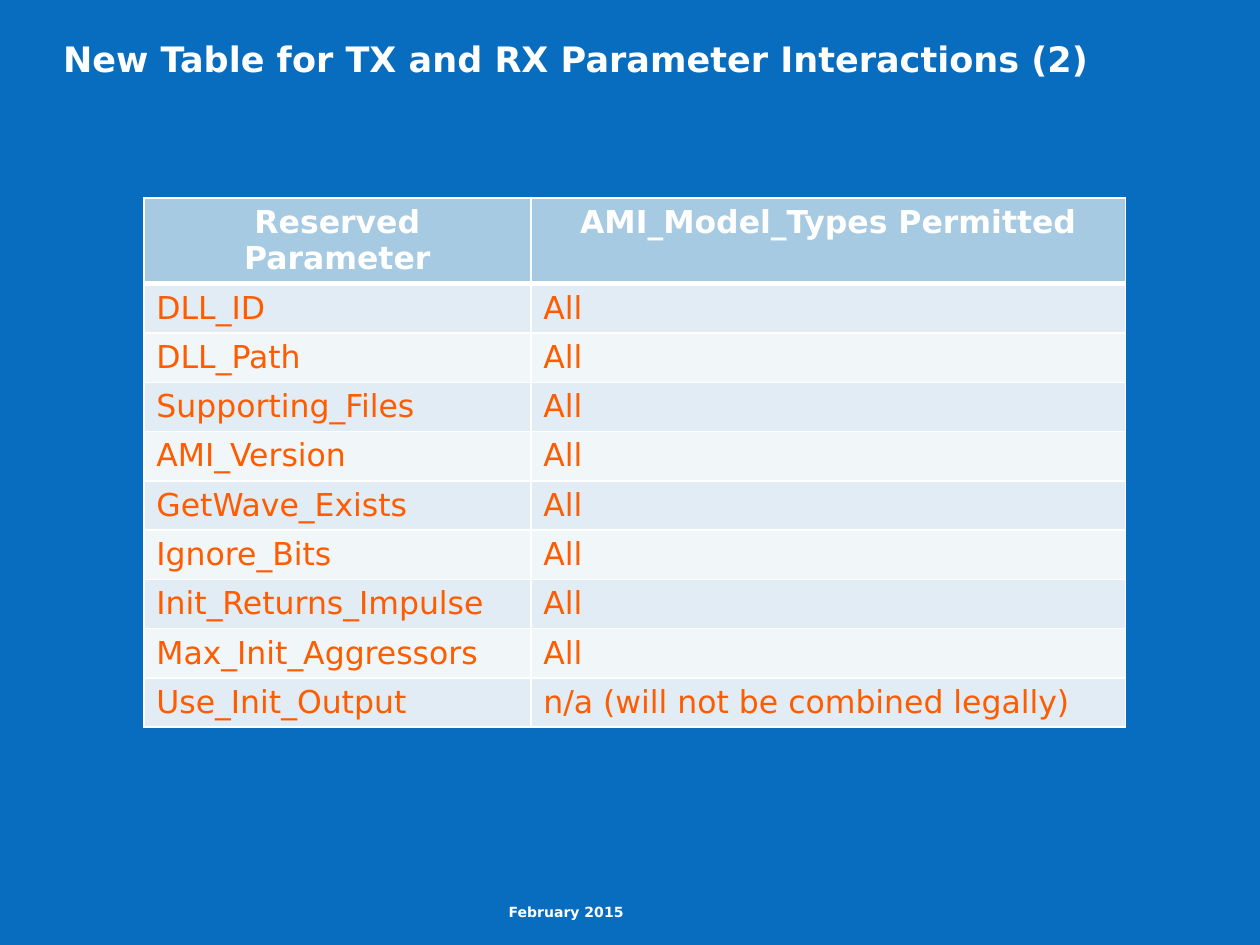
from lxml.etree import SubElement
from pptx import Presentation
from pptx.dml.color import RGBColor
from pptx.enum.text import MSO_ANCHOR, MSO_AUTO_SIZE, PP_ALIGN
from pptx.oxml.ns import qn
from pptx.util import Cm, Pt

BLUE = RGBColor(0x09, 0x6D, 0xBF)
WHITE = RGBColor(0xFF, 0xFF, 0xFF)
ORANGE = RGBColor(0xFF, 0x5C, 0x00)
HEADER_FILL = RGBColor(0xA6, 0xCA, 0xE1)
BAND_FILLS = (RGBColor(0xE1, 0xEC, 0xF4), RGBColor(0xF1, 0xF6, 0xF9))
FONT = "DejaVu Sans"

HEADER = ("Reserved Parameter", "AMI_Model_Types Permitted")
PARAMETERS = ("DLL_ID", "DLL_Path", "Supporting_Files", "AMI_Version",
              "GetWave_Exists", "Ignore_Bits", "Init_Returns_Impulse",
              "Max_Init_Aggressors")
ROWS = [HEADER, *((name, "All") for name in PARAMETERS),
        ("Use_Init_Output", "n/a (will not be combined legally)")]


def set_text(tf, text, size, color, bold, align):
    """Write one formatted paragraph into a text frame."""
    tf.word_wrap = True
    p = tf.paragraphs[0]
    p.text = text
    p.alignment = align
    p.font.name = FONT
    p.font.size = Pt(size)
    p.font.bold = bold
    p.font.color.rgb = color


def set_borders(cell, bottom, top):
    """Draw white borders of the given bottom and top widths around a cell."""
    tc_pr = cell._tc.get_or_add_tcPr()
    for side, width in (("L", 1), ("R", 1), ("T", top), ("B", bottom)):
        ln = SubElement(tc_pr, qn(f"a:ln{side}"), w=str(Pt(width)))
        fill = SubElement(ln, qn("a:solidFill"))
        SubElement(fill, qn("a:srgbClr"), val=str(WHITE))


def fill_box(sp, left, top, width, height, text, size, align):
    """Place a shape and give it bold white text without insets."""
    sp.left, sp.top, sp.width, sp.height = left, top, width, height
    tf = sp.text_frame
    tf.margin_left = tf.margin_right = tf.margin_top = tf.margin_bottom = 0
    tf.vertical_anchor = MSO_ANCHOR.TOP
    tf.auto_size = MSO_AUTO_SIZE.NONE
    set_text(tf, text, size, WHITE, True, align)


def add_title(slide, left, top, width, height):
    """Place the title placeholder."""
    fill_box(slide.shapes.title, left, top, width, height,
             "New Table for TX and RX Parameter Interactions (2)", 20, PP_ALIGN.LEFT)


def add_parameter_table(slide, left, top, width, height):
    """Add the table of reserved parameters and permitted model types."""
    table = slide.shapes.add_table(len(ROWS), 2, left, top, width, height).table
    table.first_row = table.horz_banding = False
    table.columns[0].width = Cm(7.8)
    table.columns[1].width = width - Cm(7.8)
    header_height = Cm(1.73)
    row_height = (height - header_height) // (len(ROWS) - 1)
    for i, texts in enumerate(ROWS):
        is_header = i == 0
        table.rows[i].height = header_height if is_header else row_height
        for j, text in enumerate(texts):
            cell = table.cell(i, j)
            set_borders(cell, bottom=3 if is_header else 1, top=3 if i == 1 else 1)
            cell.fill.solid()
            cell.fill.fore_color.rgb = HEADER_FILL if is_header else BAND_FILLS[(i - 1) % 2]
            set_text(cell.text_frame, text, 18, WHITE if is_header else ORANGE,
                     is_header, PP_ALIGN.CENTER if is_header else PP_ALIGN.LEFT)


def add_date(slide, left, top, width, height):
    """Add the date line at the foot of the slide."""
    sp = slide.shapes.add_textbox(left, top, width, height)
    fill_box(sp, left, top, width, height, "February 2015", 8, PP_ALIGN.CENTER)


def main():
    """Build the slide and save it."""
    prs = Presentation()
    prs.slide_width, prs.slide_height = Cm(25.4), Cm(19.05)
    slide = prs.slides.add_slide(prs.slide_layouts[5])
    slide.background.fill.solid()
    slide.background.fill.fore_color.rgb = BLUE
    add_title(slide, Cm(1.27), Cm(0.76), Cm(22.89), Cm(2.46))
    add_parameter_table(slide, Cm(2.9), Cm(3.99), Cm(19.79), Cm(10.67))
    add_date(slide, Cm(4.85), Cm(18.21), Cm(13.13), Cm(0.84))
    prs.save("out.pptx")


if __name__ == "__main__":
    main()
